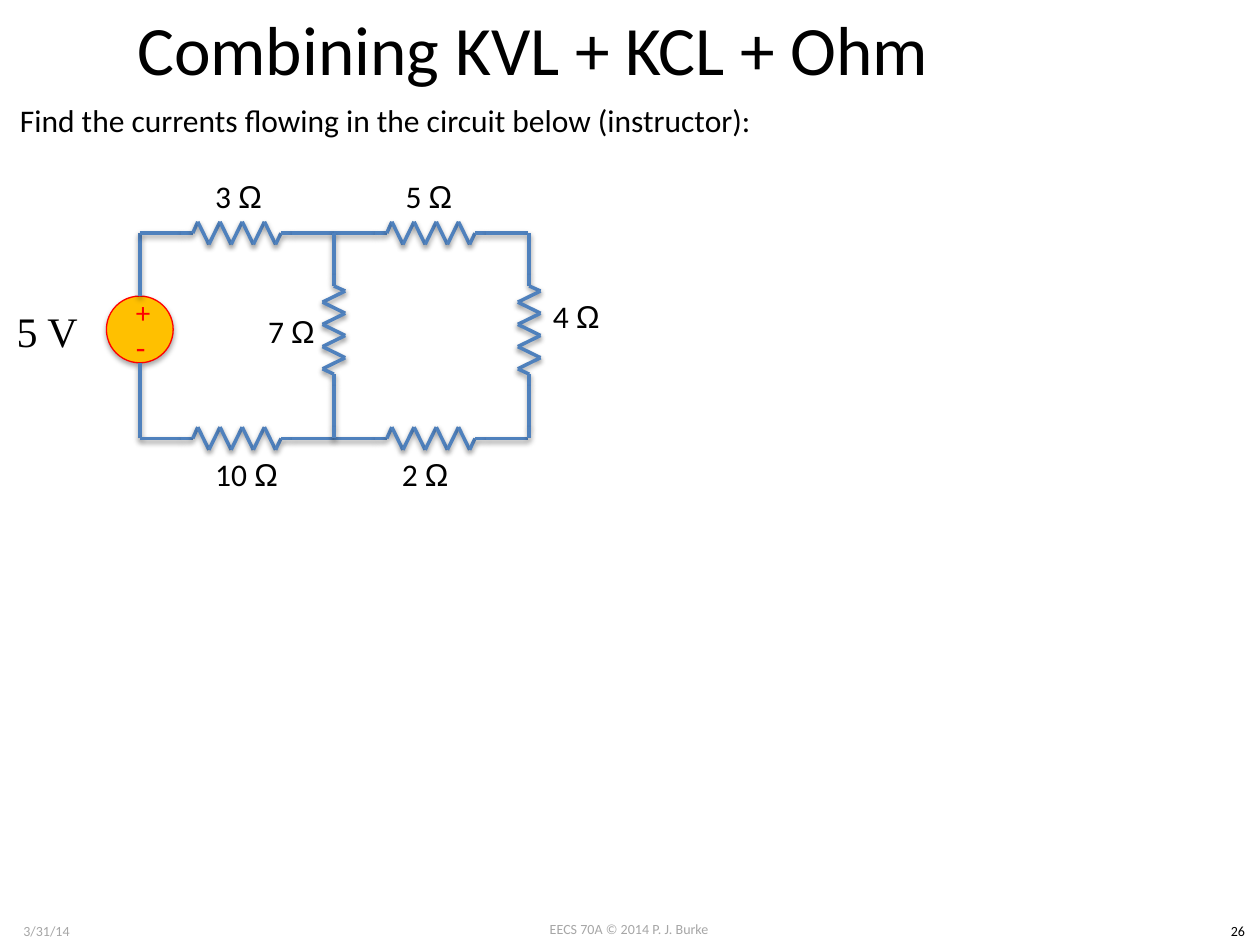
import pptx
import pptx.dml.color
import pptx.enum.shapes
import pptx.enum.text
import pptx.oxml
import pptx.oxml.ns
import pptx.util
from pptx.util import Inches

COLORS = {
    "text": "000000",
    "footer": "A6A6A6",
    "wire": "4F81BD",
    "source": "FFC000",
    "polarity": "FF0000",
}
LEFT, MIDDLE, RIGHT = 1.11, 2.65, 4.2
TOP, BOTTOM = 1.85, 3.48
SOURCE_TOP, SOURCE_SIZE = 2.35, 0.53
SWING = 0.09
RESISTOR_LENGTH = 1.54


def rgb(name):
    return pptx.dml.color.RGBColor.from_string(COLORS[name])


def add_text(shapes, box, runs, size, color="text", centered=False,
             middle=False, wrap=True, grow=False):
    """Add a one-paragraph text box; runs holds (wording, font) pairs."""
    textbox = shapes.add_textbox(*(Inches(value) for value in box))
    frame = textbox.text_frame
    frame.word_wrap = wrap
    if grow:
        frame.auto_size = pptx.enum.text.MSO_AUTO_SIZE.SHAPE_TO_FIT_TEXT
    if middle:
        frame.vertical_anchor = pptx.enum.text.MSO_ANCHOR.MIDDLE
    paragraph = frame.paragraphs[0]
    if centered:
        paragraph.alignment = pptx.enum.text.PP_ALIGN.CENTER
    for wording, font in runs:
        run = paragraph.add_run()
        run.text = wording
        run.font.name = font
        run.font.size = pptx.util.Pt(size)
        run.font.color.rgb = rgb(color)


def add_shadow(element, opacity, distance):
    """Give a shape or connector element a soft shadow straight below it."""
    properties = element.spPr
    for effects in properties.findall(pptx.oxml.ns.qn("a:effectLst")):
        properties.remove(effects)
    properties.append(pptx.oxml.parse_xml(
        f'<a:effectLst {pptx.oxml.ns.nsdecls("a")}>'
        f'<a:outerShdw blurRad="{pptx.util.Pt(3.1)}" dist="{pptx.util.Pt(distance)}"'
        ' dir="5400000" rotWithShape="0"><a:srgbClr val="000000">'
        f'<a:alpha val="{opacity * 1000}"/></a:srgbClr></a:outerShdw></a:effectLst>'))


def add_wire(shapes, start, end):
    wire = shapes.add_connector(
        pptx.enum.shapes.MSO_CONNECTOR.STRAIGHT,
        *(Inches(value) for value in (*start, *end)))
    wire.line.color.rgb = rgb("wire")
    wire.line.width = pptx.util.Pt(2)
    add_shadow(wire._element, 38, 1.6)


def add_resistor(slide, x, y, vertical=False):
    """Draw leads and zigzag from (x, y), going right or down."""
    peaks = [(0.46 + 0.09 * i * 0.98, SWING * (-1) ** (i + 1)) for i in range(8)]
    profile = [(0, 0), (0.33, 0), (0.42, 0), *peaks,
               (1.12, 0), (1.21, 0), (RESISTOR_LENGTH, 0)]
    if vertical:
        points = [(x - offset, y + along) for along, offset in profile]
        points.append((x, BOTTOM))
    else:
        points = [(x + along, y + offset) for along, offset in profile]
    group = slide.shapes.add_group_shape()
    for start, end in zip(points, points[1:]):
        add_wire(group.shapes, start, end)


def add_source(slide):
    group = slide.shapes.add_group_shape()
    circle = group.shapes.add_shape(
        pptx.enum.shapes.MSO_SHAPE.OVAL, Inches(LEFT - SOURCE_SIZE / 2),
        Inches(SOURCE_TOP), Inches(SOURCE_SIZE), Inches(SOURCE_SIZE))
    circle.fill.solid()
    circle.fill.fore_color.rgb = rgb("source")
    circle.line.color.rgb = rgb("polarity")
    circle.line.width = pptx.util.Pt(0.75)
    circle.shadow.inherit = False
    add_shadow(circle._element, 35, 1.8)
    for sign, top, size in (("+", 2.31, 16.6), ("-", 2.59, 18)):
        add_text(group.shapes, (0.98, top, 0.26, 0.33), [(sign, "Calibri")], size,
                 "polarity", centered=True, middle=True)
    add_wire(group.shapes, (LEFT, BOTTOM), (LEFT, SOURCE_TOP + SOURCE_SIZE))
    add_wire(group.shapes, (LEFT, SOURCE_TOP), (LEFT, TOP))


def add_resistance(slide, ohms, left, top, width=0.58):
    add_text(slide.shapes, (left, top, width, 0.4),
             [(f"{ohms} ", "Calibri"), ("Ω", "Arial")], 18, wrap=False, grow=True)


def add_footer(slide, wording, left, top, width, color="footer"):
    add_text(slide.shapes, (left, top, width, 0.24), [(wording, "Calibri")], 8,
             color, centered=True, grow=True)


def main():
    presentation = pptx.Presentation()
    presentation.slide_width = Inches(10)
    presentation.slide_height = Inches(7.5)
    slide = presentation.slides.add_slide(presentation.slide_layouts[6])

    add_footer(slide, "EECS 70A © 2014 P. J. Burke", 3.83, 7.26, 2.33)
    add_footer(slide, "3/31/14", 0, 7.27, 0.74)
    add_footer(slide, "26", 9.65, 7.27, 0.35, "text")

    add_text(slide.shapes, (0.83, 0, 6.8, 0.75),
             [("Combining KVL + KCL + Ohm", "Calibri")], 39.6,
             centered=True, middle=True)
    add_text(slide.shapes, (0.06, 0.75, 6.08, 0.4),
             [("Find the currents flowing in the circuit below (instructor):",
               "Calibri")], 18, wrap=False, grow=True)
    add_text(slide.shapes, (-0.22, 2.26, 1.19, 0.73),
             [("5 V", "Times New Roman")], 24, centered=True, middle=True)

    add_source(slide)
    for y in (TOP, BOTTOM):
        for x in (LEFT, MIDDLE):
            add_resistor(slide, x, y)
    for x in (MIDDLE, RIGHT):
        add_resistor(slide, x, TOP, vertical=True)

    add_resistance(slide, 3, 1.61, 1.36)
    add_resistance(slide, 5, 3.12, 1.36)
    add_resistance(slide, 4, 4.29, 2.31)
    add_resistance(slide, 2, 3.09, 3.56)
    add_resistance(slide, 7, 2.03, 2.43)
    add_resistance(slide, 10, 1.61, 3.56, 0.71)

    presentation.save("out.pptx")


if __name__ == "__main__":
    main()
